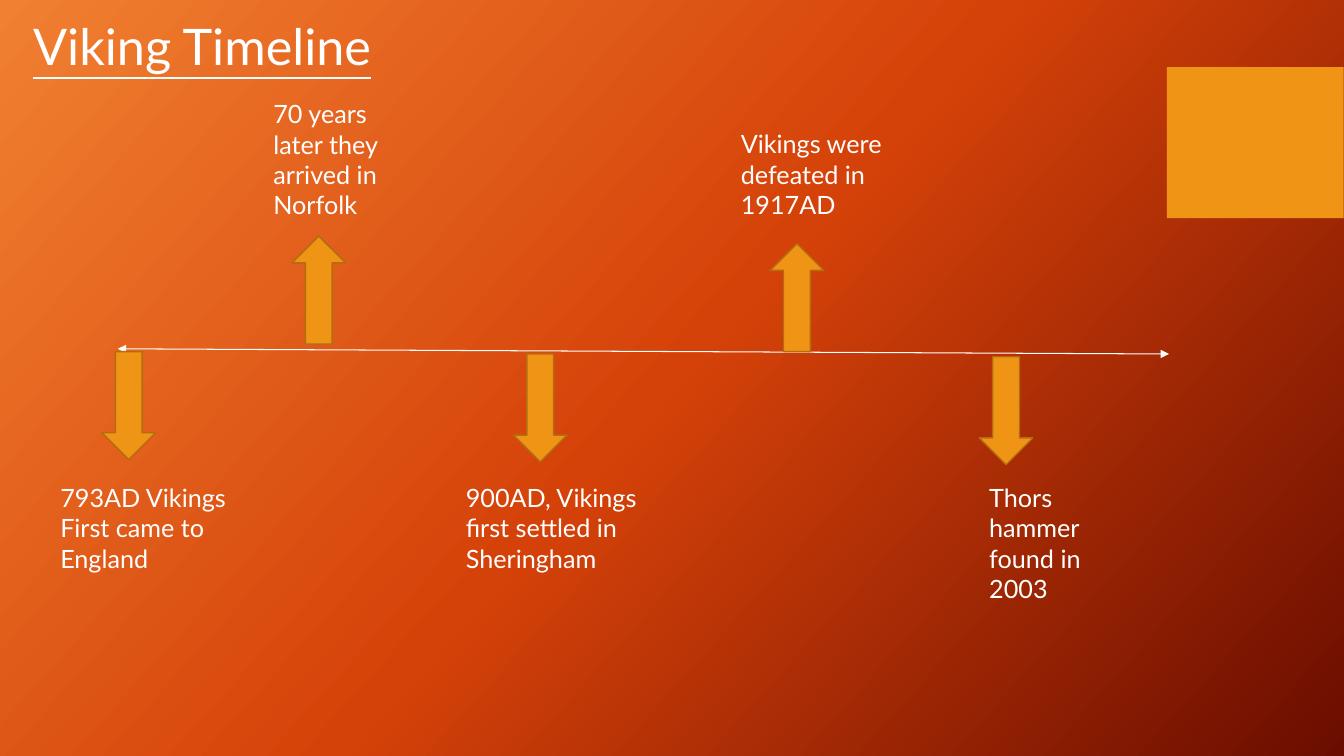
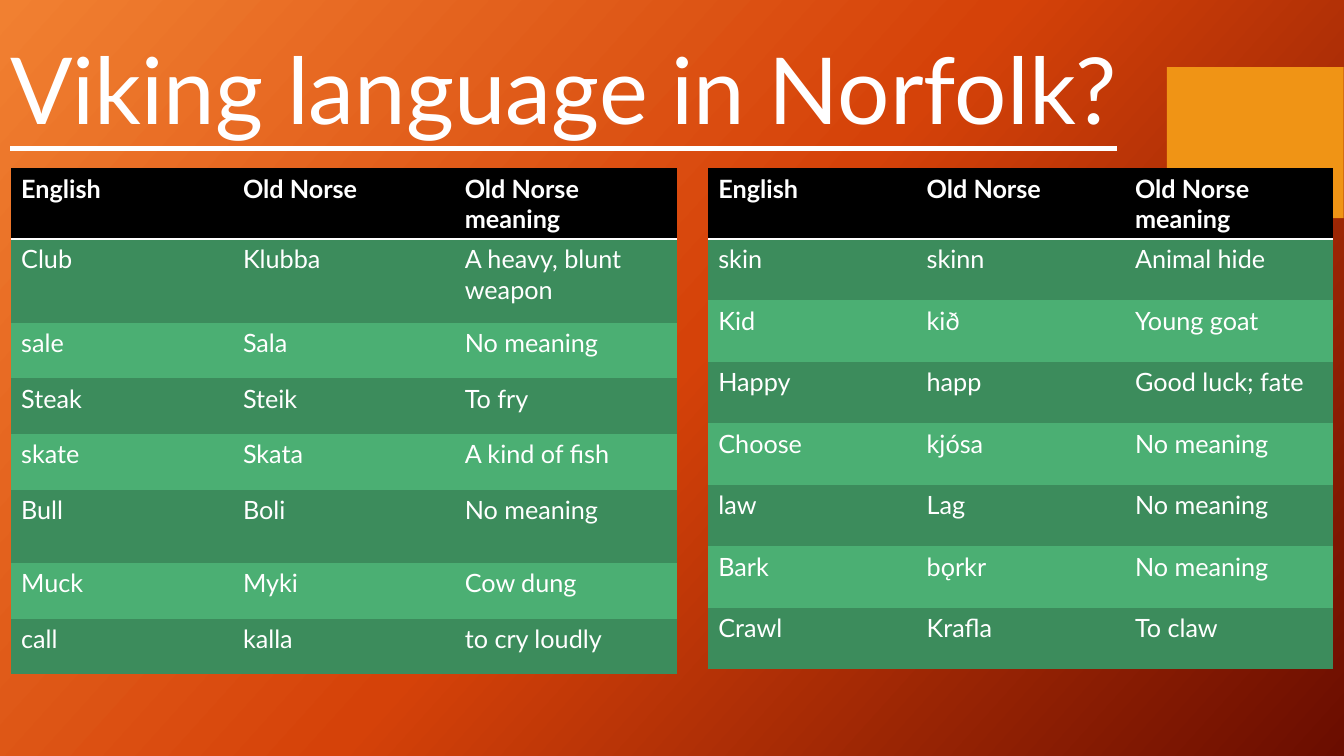
from copy import deepcopy

from lxml import etree
from pptx import Presentation
from pptx.dml.color import RGBColor
from pptx.enum.shapes import MSO_CONNECTOR, MSO_SHAPE
from pptx.enum.text import MSO_ANCHOR, MSO_AUTO_SIZE, PP_ALIGN
from pptx.oxml.ns import qn
from pptx.util import Cm, Pt

RECTANGLE = MSO_SHAPE.RECTANGLE
UP, DOWN = MSO_SHAPE.UP_ARROW, MSO_SHAPE.DOWN_ARROW
STRAIGHT = MSO_CONNECTOR.STRAIGHT
TOP, LEFT = MSO_ANCHOR.TOP, PP_ALIGN.LEFT
NO_AUTOFIT = MSO_AUTO_SIZE.NONE

FONT = "Lato"
BODY_SIZE = 18
PLAIN_TABLE_STYLE = "{2D5ABB26-0587-4C30-8999-92F81FD0307C}"
COLOURS = {
    "text": "FFFFFF",
    "accent": "F09415",
    "arrow line": "B26D10",
    "header": "000000",
    "dark row": "3C8C5C",
    "light row": "4BAF73",
}
BACKGROUND_STOPS = [(0, "F18031"), (0.5, "D54209"), (1, "6A0D00")]
BACKGROUND_ANGLE = 318

# All places and sizes are in centimetres.
SLIDE_SIZE = (33.87, 19.05)
BAND_BOX = (29.41, 1.69, 4.45, 3.81)
ARROW_SIZE = (1.35, 2.72)
LABEL_BELOW_TOP, LABEL_ABOVE_BOTTOM = 12.03, 5.69
LINE_HEIGHT, LABEL_PADDING = 0.76, 0.29
TIMELINE = (2.97, 8.79, 29.46, 8.92)
TABLE_TOP, HEADER_HEIGHT = 4.24, 1.78

# direction, arrow place, label left, label width, label lines, paragraphs
EVENTS = [
    (DOWN, (2.57, 8.86), 1.27, 5.51, 3, ["793AD Vikings", "First came to England"]),
    (UP, (7.36, 5.95), 6.64, 3.84, 4, ["70 years later they arrived in Norfolk"]),
    (DOWN, (12.94, 8.92), 11.49, 5.59, 3, ["900AD, Vikings first settled in Sheringham"]),
    (UP, (19.41, 6.14), 18.42, 4.67, 3, ["Vikings were defeated in 1917AD"]),
    (DOWN, (24.68, 8.99), 24.68, 3.56, 4, ["Thors hammer found in 2003"]),
]

HEADINGS = ("English", "Old Norse", "Old Norse meaning")
WORD_TABLES = [
    {
        "left": 0.28,
        "column width": 5.59,
        "row heights": [2.11, 1.4, 1.4, 1.41, 1.85, 1.4, 1.4],
        "words": [
            ("Club", "Klubba", "A heavy, blunt weapon"),
            ("sale", "Sala", "No meaning"),
            ("Steak", "Steik", "To fry"),
            ("skate", "Skata", "A kind of fish"),
            ("Bull", "Boli", "No meaning"),
            ("Muck", "Myki", "Cow dung"),
            ("call", "kalla", "to cry loudly"),
        ],
    },
    {
        "left": 17.85,
        "column width": 5.25,
        "row heights": [1.55] * 7,
        "words": [
            ("skin", "skinn", "Animal hide"),
            ("Kid", "kið", "Young goat"),
            ("Happy", "happ", "Good luck; fate"),
            ("Choose", "kjósa", "No meaning"),
            ("law", "Lag", "No meaning"),
            ("Bark", "bǫrkr", "No meaning"),
            ("Crawl", "Krafla", "To claw"),
        ],
    },
]


def colour(name):
    return RGBColor.from_string(COLOURS[name])


def lengths(values):
    return [Cm(value) for value in values]


def write(paragraph, text, size=BODY_SIZE, bold=False, underline=False):
    paragraph.alignment = LEFT
    run = paragraph.add_run()
    run.text = text
    font = run.font
    font.name, font.size = FONT, Pt(size)
    font.bold, font.underline = bold, underline
    font.color.rgb = colour("text")


def add_filled_shape(slide, preset, box):
    shape = slide.shapes.add_shape(preset, *lengths(box))
    shape.shadow.inherit = False
    shape.fill.solid()
    shape.fill.fore_color.rgb = colour("accent")
    shape.line.fill.background()
    return shape


def set_master_background(presentation):
    master = presentation.slide_master
    fill = master.background.fill
    fill.gradient()
    fill.gradient_angle = BACKGROUND_ANGLE
    stop_list = master.element.find(".//" + qn("a:gsLst"))
    stop_list.insert(1, deepcopy(stop_list[0]))
    for stop, (position, value) in zip(fill.gradient_stops, BACKGROUND_STOPS):
        stop.position = position
        stop.color.rgb = RGBColor.from_string(value)


def add_titled_slide(presentation, text, box, size, wrap=True):
    """Add a slide with the shared band and a formatted title."""
    slide = presentation.slides.add_slide(presentation.slide_layouts[5])
    add_filled_shape(slide, RECTANGLE, BAND_BOX)
    title = slide.shapes.title
    title.left, title.top, title.width, title.height = lengths(box)
    frame = title.text_frame
    frame.auto_size = NO_AUTOFIT
    frame.word_wrap = wrap
    frame.vertical_anchor = TOP
    write(frame.paragraphs[0], text, size, underline=True)
    return slide


def add_timeline(slide):
    connector = slide.shapes.add_connector(STRAIGHT, *lengths(TIMELINE))
    connector.line.width = Pt(0.75)
    connector.line.color.rgb = colour("text")
    properties = connector.element.spPr
    line = properties.find(qn("a:ln"))
    for end in ("a:headEnd", "a:tailEnd"):
        etree.SubElement(line, qn(end), type="triangle")
    etree.SubElement(properties, qn("a:effectLst"))


def add_event(slide, direction, place, left, width, line_count, paragraphs):
    arrow = add_filled_shape(slide, direction, place + ARROW_SIZE)
    arrow.line.color.rgb = colour("arrow line")
    arrow.line.width = Pt(1)

    height = line_count * LINE_HEIGHT + LABEL_PADDING
    top = LABEL_BELOW_TOP if direction == DOWN else LABEL_ABOVE_BOTTOM - height
    label = slide.shapes.add_textbox(*lengths((left, top, width, height)))
    frame = label.text_frame
    frame.word_wrap = True
    for index, text in enumerate(paragraphs):
        write(frame.add_paragraph() if index else frame.paragraphs[0], text)


def add_bottom_border(cell):
    border = etree.Element(qn("a:lnB"), w=str(Pt(2)))
    fill = etree.SubElement(border, qn("a:solidFill"))
    etree.SubElement(fill, qn("a:srgbClr"), val=COLOURS["text"])
    cell._tc.get_or_add_tcPr().insert(0, border)


def add_word_table(slide, content):
    rows = [HEADINGS] + content["words"]
    heights = [HEADER_HEIGHT] + content["row heights"]
    column_width = content["column width"]
    box = (content["left"], TABLE_TOP, column_width * len(HEADINGS), sum(heights))
    frame = slide.shapes.add_table(len(rows), len(HEADINGS), *lengths(box))
    table = frame.table
    frame.element.find(".//" + qn("a:tableStyleId")).text = PLAIN_TABLE_STYLE
    for column in table.columns:
        column.width = Cm(column_width)
    for index, (words, height) in enumerate(zip(rows, heights)):
        is_header = index == 0
        row_fill = "header" if is_header else "dark row" if index % 2 else "light row"
        table.rows[index].height = Cm(height)
        for cell, text in zip(table.rows[index].cells, words):
            cell.fill.solid()
            cell.fill.fore_color.rgb = colour(row_fill)
            write(cell.text_frame.paragraphs[0], text, bold=is_header)
            if is_header:
                add_bottom_border(cell)


def main():
    presentation = Presentation()
    presentation.slide_width, presentation.slide_height = lengths(SLIDE_SIZE)
    set_master_background(presentation)

    timeline_slide = add_titled_slide(
        presentation, "Viking Timeline", (0.58, 0.25, 9.3, 1.8), 36, wrap=False)
    add_timeline(timeline_slide)
    for event in EVENTS:
        add_event(timeline_slide, *event)

    language_slide = add_titled_slide(
        presentation, "Viking language in Norfolk?", (0, 0.69, 33.6, 3.07), 66)
    for content in WORD_TABLES:
        add_word_table(language_slide, content)

    presentation.save("out.pptx")


if __name__ == "__main__":
    main()
